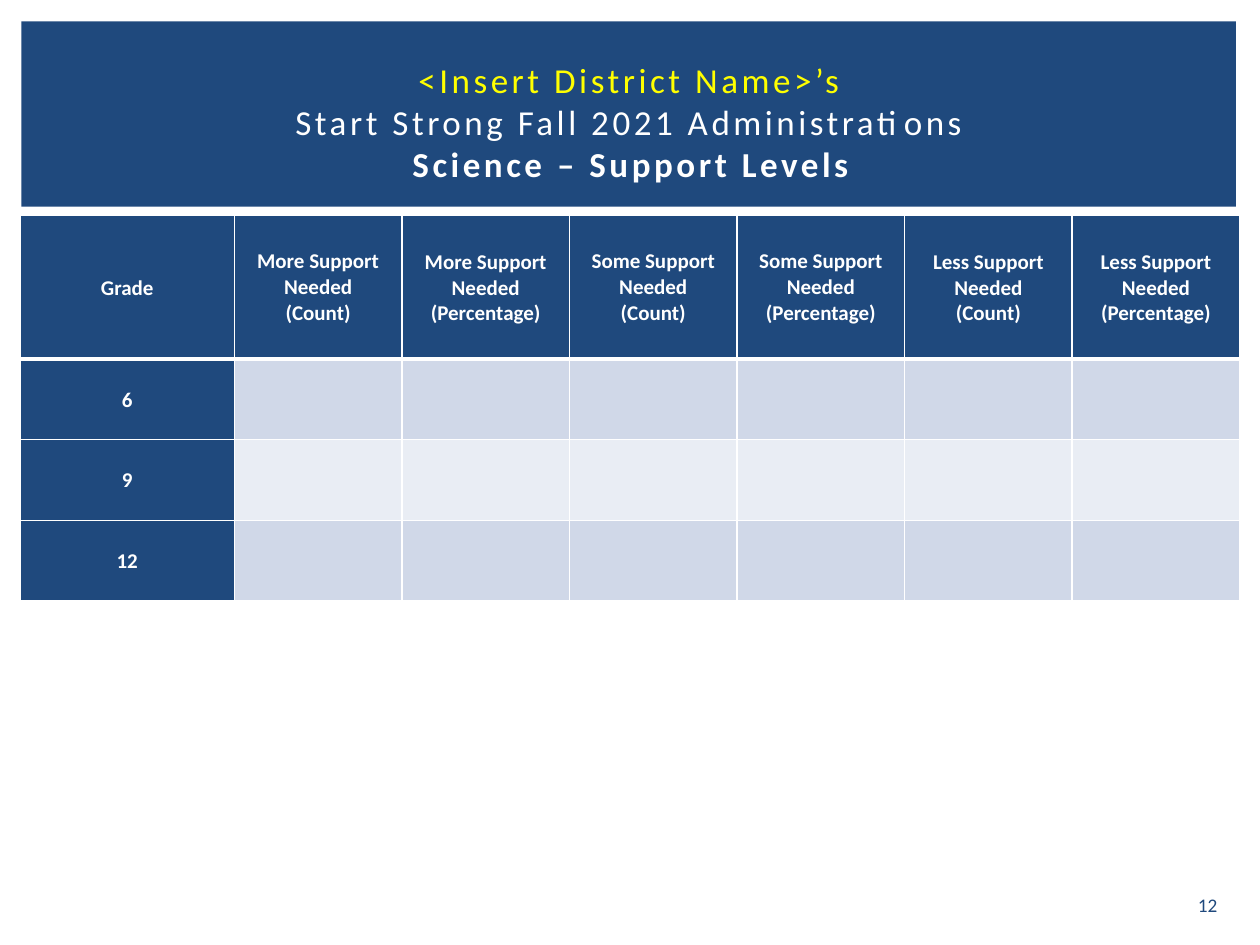
"""Build the science support levels slide with its blank results table."""
from lxml import etree
from pptx import Presentation, util as u
from pptx.dml.color import RGBColor
from pptx.enum import shapes, text
from pptx.oxml.ns import qn

NAVY, WHITE, YELLOW = "1F497D", "FFFFFF", "FFFF00"
BANDS = ["D0D8E8", "E9EDF4"]


def paint(fill, color):
    fill.solid()
    fill.fore_color.rgb = RGBColor.from_string(color)


def style(p, size, color, bold=False):
    p.alignment = text.PP_ALIGN.CENTER
    for r in p.runs:
        r.font.name = "Calibri"
        r.font.size = u.Pt(size)
        r.font.bold = bold
        paint(r.font.fill, color)


prs = Presentation()
prs.slide_width, prs.slide_height = u.Inches(10), u.Inches(7.5)
s = prs.slides.add_slide(prs.slide_layouts[5])

title = s.shapes.title
title.left, title.top = u.Inches(0.42), u.Inches(0.39)
title.width, title.height = u.Inches(9.17), u.Inches(1.15)
tf = title.text_frame
tf.vertical_anchor = text.MSO_ANCHOR.MIDDLE
tf.text = "<Insert District Name>’s\vStart Strong Fall 2021 Administrations\vScience – Support Levels"
p = tf.paragraphs[0]
style(p, 20, WHITE)
for r in p.runs:
    r.font._element.set("spc", "200")
paint(p.runs[0].font.fill, YELLOW)
p.runs[-1].font.bold = True

band = s.shapes.add_shape(shapes.MSO_SHAPE.RECTANGLE, u.Inches(0.17), u.Inches(0.17),
                          u.Inches(9.64), u.Inches(1.47))
band.shadow.inherit = False
paint(band.fill, NAVY)
band.line.fill.background()
title._element.addprevious(band._element)

headers = ["Grade"] + [f"{level} Support Needed\n({unit})"
                       for level in ("More", "Some", "Less")
                       for unit in ("Count", "Percentage")]
rows = [headers] + [[grade] + [""] * 6 for grade in ("6", "9", "12")]
tight_headers = (2, 5, 6)

table = s.shapes.add_table(4, 7, u.Inches(0.16), u.Inches(1.71),
                           u.Inches(9.68), u.Inches(3.06)).table
for i, col in enumerate(table.columns):
    col.width = u.Inches(1.33 if i else 1.7)
for i, row in enumerate(table.rows):
    row.height = u.Inches(0.64 if i else 1.14)

for i, values in enumerate(rows):
    for j, value in enumerate(values):
        cell = table.cell(i, j)
        cell.vertical_anchor = text.MSO_ANCHOR.MIDDLE
        tight = i == 0 and j in tight_headers
        cell.margin_left = cell.margin_right = u.Inches(0.01 if tight else 0.05)
        cell.margin_top = u.Inches(0.01 if tight else 0.03)
        cell.margin_bottom = u.Inches(0 if tight else 0.03)
        cell.text = value
        for p in cell.text_frame.paragraphs:
            style(p, 12, WHITE, bold=True)
            if j == 0:
                p.line_spacing = 1.06
                p.space_after = u.Pt(8)
        tcPr = cell._tc.get_or_add_tcPr()
        for side in "LRTB":
            thick = (i, side) in ((0, "B"), (1, "T"))
            ln = etree.SubElement(tcPr, qn(f"a:ln{side}"), w=str(u.Pt(3 if thick else 1)))
            fill = etree.SubElement(ln, qn("a:solidFill"))
            etree.SubElement(fill, qn("a:srgbClr"), val=WHITE)
        paint(cell.fill, NAVY if i == 0 or j == 0 else BANDS[(i - 1) % 2])

number = s.shapes.add_textbox(u.Inches(9.35), u.Inches(7.03), u.Inches(0.47), u.Inches(0.3))
tf = number.text_frame
tf.word_wrap = True
tf.vertical_anchor = text.MSO_ANCHOR.MIDDLE
tf.text = "12"
style(tf.paragraphs[0], 11, NAVY)

prs.save("out.pptx")
